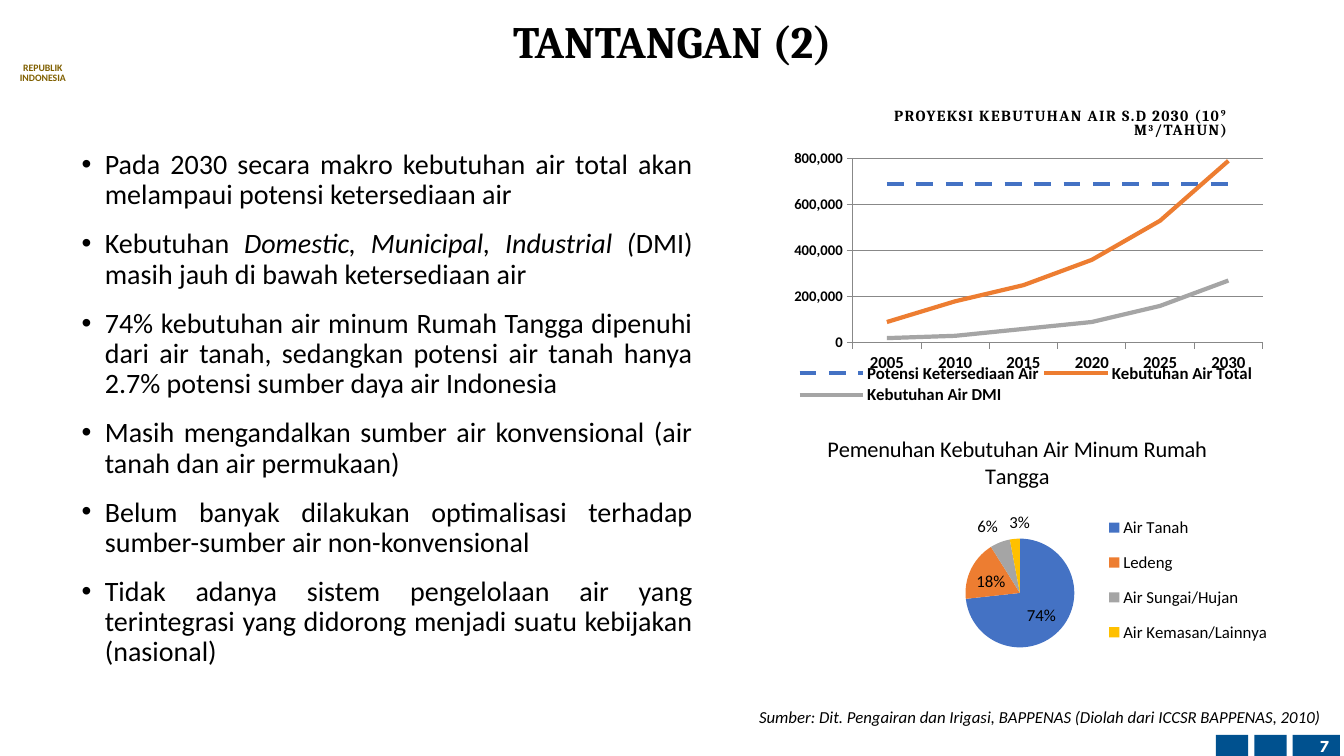
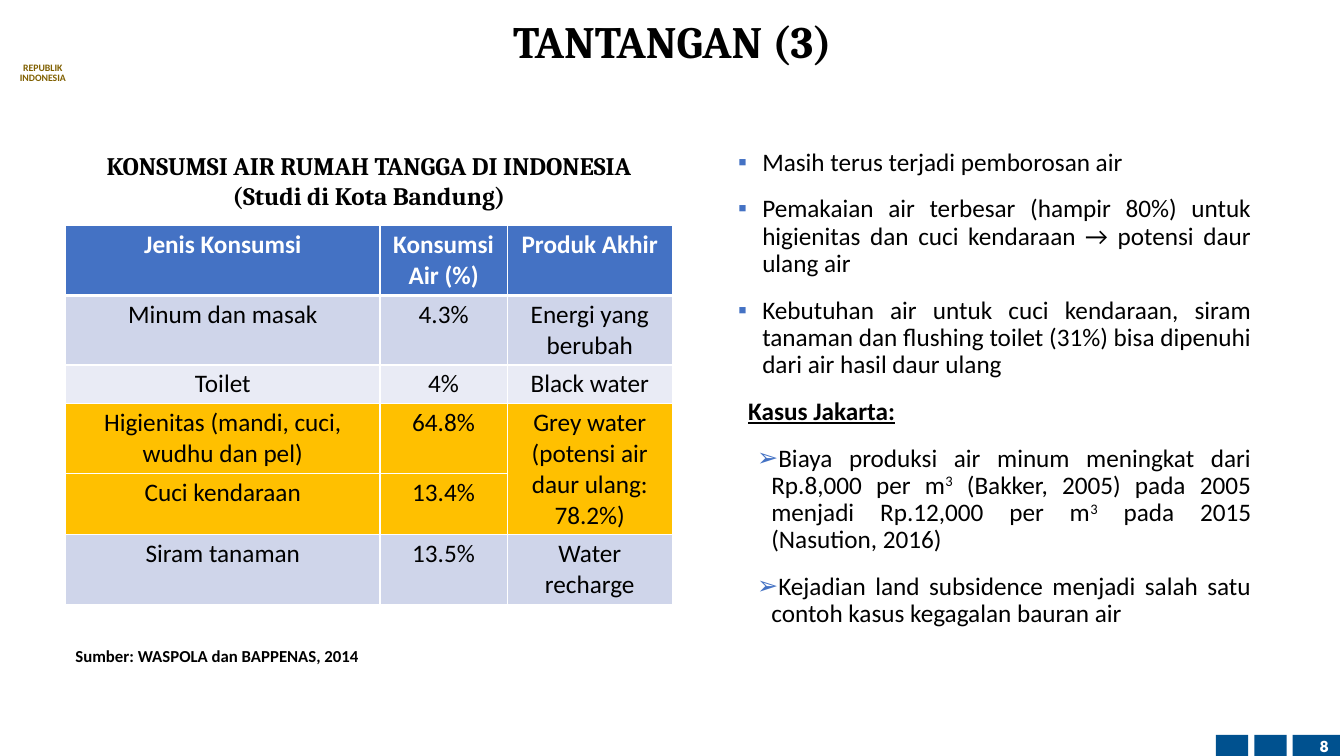
from pptx import Presentation, util as u
from pptx.chart.data import CategoryChartData
from pptx.dml.color import RGBColor
from pptx.enum import chart as c, dml, shapes, text
from pptx.oxml import parse_xml
from pptx.oxml.ns import nsdecls

Inches, Pt = u.Inches, u.Pt
LEFT, CENTER, RIGHT, JUSTIFY = (text.PP_ALIGN.LEFT, text.PP_ALIGN.CENTER,
                                text.PP_ALIGN.RIGHT, text.PP_ALIGN.JUSTIFY)
MIDDLE, TOP = text.MSO_ANCHOR.MIDDLE, text.MSO_ANCHOR.TOP
INSIDE, OUTSIDE = c.XL_LABEL_POSITION.INSIDE_END, c.XL_LABEL_POSITION.OUTSIDE_END

BLACK, WHITE, NAVY, BROWN = "000000", "FFFFFF", "00518F", "806000"
BLUE, ORANGE, GRAY, GOLD = "4472C4", "ED7D31", "A5A5A5", "FFC000"
BAND_DARK, BAND_LIGHT, AXIS_GRAY = "CFD5EA", "E9EBF5", "888888"
BODY_FONT, TITLE_FONT, NUMBER_FONT = "Calibri", "Cambria", "League Spartan"


def color(value):
    return RGBColor.from_string(value)


def style_font(font, size, value=BLACK, name=BODY_FONT, bold=False, italic=False):
    font.size, font.name, font.bold, font.italic = Pt(size), name, bold, italic
    font.color.rgb = color(value)


def write(paragraph, pieces, size, align=LEFT, spacing=None, **style):
    """Fill a paragraph; a piece is a string or (string, marks: b, i, u, ^ for superscript)."""
    paragraph.alignment = align
    if spacing:
        paragraph.line_spacing = spacing
    for piece in [pieces] if isinstance(pieces, str) else pieces:
        words, marks = (piece, "") if isinstance(piece, str) else piece
        run = paragraph.add_run()
        run.text = words
        style_font(run.font, size, **style)
        for mark, attribute in (("b", "bold"), ("i", "italic"), ("u", "underline")):
            if mark in marks:
                setattr(run.font, attribute, True)
        if "^" in marks:
            run._r.get_or_add_rPr().set("baseline", "30000")


def set_bullet(paragraph, left, hanging, character, value):
    properties = paragraph._p.get_or_add_pPr()
    properties.set("marL", str(Inches(left)))
    properties.set("indent", str(Inches(-hanging)))
    if not character:
        properties.append(parse_xml(f"<a:buNone {nsdecls('a')}/>"))
        return
    properties.append(parse_xml(
        f'<a:buClr {nsdecls("a")}><a:srgbClr val="{value}"/></a:buClr>'))
    properties.append(parse_xml(f'<a:buChar {nsdecls("a")} char="{character}"/>'))


def set_border(cell, side, width):
    cell._tc.get_or_add_tcPr().append(parse_xml(
        f'<a:ln{side} {nsdecls("a")} w="{Pt(width)}"><a:solidFill>'
        f'<a:srgbClr val="{WHITE}"/></a:solidFill></a:ln{side}>'))


def place_chart_parts(chart, plot, legend):
    """Set the plot area and legend boxes as fractions of the chart."""
    def layout(box, target=""):
        x, y, width, height = box
        return parse_xml(
            f'<c:layout {nsdecls("c")}><c:manualLayout>{target}'
            f'<c:xMode val="edge"/><c:yMode val="edge"/><c:x val="{x}"/><c:y val="{y}"/>'
            f'<c:w val="{width}"/><c:h val="{height}"/></c:manualLayout></c:layout>')

    for old in chart.element.xpath("c:chart/c:plotArea/c:layout | c:chart/c:legend/c:layout"):
        old.getparent().remove(old)
    inner = '<c:layoutTarget val="inner"/>'
    chart.element.xpath("c:chart/c:plotArea")[0].insert(0, layout(plot, inner))
    chart.element.xpath("c:chart/c:legend/c:legendPos")[0].addnext(layout(legend))


def shift_last_label(chart, x, y):
    """Move the last point's label by fractions of the chart, without a leader line."""
    chart.element.xpath(".//c:dLbl/c:idx")[-1].addnext(parse_xml(
        f'<c:layout {nsdecls("c")}><c:manualLayout><c:x val="{x}"/><c:y val="{y}"/>'
        f'</c:manualLayout></c:layout>'))
    for leader in chart.element.xpath(".//c:showLeaderLines"):
        leader.set("val", "0")


class Deck:
    """The shared style and the slide being built."""

    def __init__(self):
        self.presentation = Presentation()
        self.presentation.slide_width = Inches(13.33)
        self.presentation.slide_height = Inches(7.5)
        self.slide = None

    def new_slide(self, title, number):
        self.slide = self.presentation.slides.add_slide(self.presentation.slide_layouts[1])
        for left, width in ((12.06, 0.32), (12.44, 0.32), (12.82, 0.47)):
            self.rectangle(left, 7.29, width, 0.22, NAVY)
        self.textbox((0.05, 0.58, 0.75, 0.3), "REPUBLIK INDONESIA", 7, CENTER,
                     spacing=Pt(7), value=BROWN, bold=True)
        self.textbox((12.75, 7.29, 0.53, 0.22), number, 12, RIGHT, anchor=MIDDLE,
                     value=WHITE, name=NUMBER_FONT, bold=True)
        frame = self.frame(self.slide.shapes.title, (1.1, 0.03, 11.14, 0.81), MIDDLE)
        write(frame.paragraphs[0], title, 32, CENTER, 0.9, name=TITLE_FONT, bold=True)

    def frame(self, shape, box, anchor=TOP, inset=(0.1, 0.05)):
        shape.left, shape.top, shape.width, shape.height = map(Inches, box)
        frame = shape.text_frame
        frame.word_wrap, frame.auto_size = True, text.MSO_AUTO_SIZE.NONE
        frame.vertical_anchor = anchor
        frame.margin_left = frame.margin_right = Inches(inset[0])
        frame.margin_top = frame.margin_bottom = Inches(inset[1])
        return frame

    def rectangle(self, left, top, width, height, value):
        shape = self.slide.shapes.add_shape(
            shapes.MSO_SHAPE.RECTANGLE, *map(Inches, (left, top, width, height)))
        shape.shadow.inherit = False
        shape.fill.solid()
        shape.fill.fore_color.rgb = color(value)
        shape.line.fill.background()

    def textbox(self, box, pieces, size, align=LEFT, anchor=TOP, inset=(0.1, 0.05), **style):
        shape = self.slide.shapes.add_textbox(*map(Inches, box))
        paragraph = self.frame(shape, box, anchor, inset).paragraphs[0]
        write(paragraph, pieces, size, align, **style)
        return paragraph

    def bullet_list(self, box, items, size, before, after=0, value=BLACK, inset=(0.1, 0.05)):
        """Fill the body placeholder; an item is (bullet style, pieces)."""
        frame = self.frame(self.slide.placeholders[1], box, inset=inset)
        for index, (bullet, pieces) in enumerate(items):
            paragraph = frame.add_paragraph() if index else frame.paragraphs[0]
            set_bullet(paragraph, *bullet, value)
            paragraph.space_before = Pt(before if index else 0)
            paragraph.space_after = Pt(after)
            write(paragraph, pieces, size, JUSTIFY, 0.9)

    def chart(self, kind, box, categories, series, number_format, bold=False):
        data = CategoryChartData(number_format=number_format)
        data.categories = categories
        for name, values in series:
            data.add_series(name, values)
        chart = self.slide.shapes.add_chart(kind, *map(Inches, box), data).chart
        style_font(chart.font, 12, bold=bold)
        chart.has_title = False
        chart.has_legend = True
        chart.legend.include_in_layout = False
        style_font(chart.legend.font, 12, bold=bold)
        return chart

    def line_chart(self, box, categories, series, colors):
        chart = self.chart(c.XL_CHART_TYPE.LINE, box, categories, series, "#,##0", bold=True)
        chart.legend.position = c.XL_LEGEND_POSITION.BOTTOM
        place_chart_parts(chart, (0.14, 0.05, 0.84, 0.69), (0.02, 0.81, 0.95, 0.17))
        chart.plots[0].vary_by_categories = False
        for line, value in zip(chart.plots[0].series, colors):
            line.smooth = False
            line.marker.style = c.XL_MARKER_STYLE.NONE
            line.format.line.width = Pt(3)
            line.format.line.color.rgb = color(value)
        chart.plots[0].series[0].format.line.dash_style = dml.MSO_LINE.DASH
        values = chart.value_axis
        values.minimum_scale, values.maximum_scale, values.major_unit = 0, 800000, 200000
        values.major_gridlines.format.line.color.rgb = color(AXIS_GRAY)
        for axis, size in ((values, 10.5), (chart.category_axis, 12)):
            axis.major_tick_mark = c.XL_TICK_MARK.OUTSIDE
            axis.format.line.color.rgb = color(AXIS_GRAY)
            style_font(axis.tick_labels.font, size, bold=True)

    def pie_chart(self, box, title, shares, colors):
        chart = self.chart(c.XL_CHART_TYPE.PIE, box, list(shares),
                           [("Series 1", list(shares.values()))], "0%")
        chart.has_title = True
        write(chart.chart_title.text_frame.paragraphs[0], title, 16, CENTER)
        chart.legend.position = c.XL_LEGEND_POSITION.RIGHT
        place_chart_parts(chart, (0.4, 0.41, 0.21, 0.38), (0.67, 0.29, 0.32, 0.53))
        plot = chart.plots[0]
        plot.vary_by_categories = True
        plot.has_data_labels = True
        plot.data_labels.show_value = True
        plot.data_labels.number_format = "0%"
        plot.data_labels.number_format_is_linked = False
        for index, (share, value) in enumerate(zip(shares.values(), colors)):
            point = plot.series[0].points[index]
            point.format.fill.solid()
            point.format.fill.fore_color.rgb = color(value)
            style_font(point.data_label.font, 12)
            point.data_label.position = INSIDE if share > 0.1 else OUTSIDE
        shift_last_label(chart, 0.03, 0)

    def table(self, box, widths, heights, rows, fills, merge):
        """Draw a table with a header row; merge is a pair of (row, column)."""
        table = self.slide.shapes.add_table(
            len(rows), len(widths), *map(Inches, box)).table
        for column, width in zip(table.columns, widths):
            column.width = Inches(width)
        for row, height in zip(table.rows, heights):
            row.height = Inches(height)
        for row_index, (row, fill) in enumerate(zip(rows, fills)):
            header = row_index == 0
            for column_index, words in enumerate(row):
                cell = table.cell(row_index, column_index)
                cell.margin_left = cell.margin_right = Inches(0.07)
                cell.margin_top = cell.margin_bottom = Inches(0.04)
                for side in "LRTB":
                    thick = (header and side == "B") or (row_index == 1 and side == "T")
                    set_border(cell, side, 3 if thick else 1)
                cell.fill.solid()
                cell.fill.fore_color.rgb = color(fill)
                if words:
                    write(cell.text_frame.paragraphs[0], words, 18, CENTER,
                          value=WHITE if header else BLACK, bold=header)
        first, last = merge
        table.cell(*first).merge(table.cell(*last))


def build_projection_slide(deck):
    deck.new_slide("TANTANGAN (2)", "7")
    dot = (0.23, 0.23, "•")
    points = [
        "Pada 2030 secara makro kebutuhan air total akan melampaui potensi ketersediaan air",
        ["Kebutuhan ", ("Domestic, Municipal, Industrial (", "i"),
         "DMI) masih jauh di bawah ketersediaan air"],
        "74% kebutuhan air minum Rumah Tangga dipenuhi dari air tanah, sedangkan potensi "
        "air tanah hanya 2.7% potensi sumber daya air Indonesia",
        "Masih mengandalkan sumber air konvensional (air tanah dan air permukaan)",
        "Belum banyak dilakukan optimalisasi terhadap sumber-sumber air non-konvensional",
        "Tidak adanya sistem pengelolaan air yang terintegrasi yang didorong menjadi "
        "suatu kebijakan (nasional)",
    ]
    deck.bullet_list((0.71, 1.44, 6.26, 4.77), [(dot, point) for point in points], 20, 13.5)
    deck.pie_chart((7.52, 4.15, 5.14, 2.89), "Pemenuhan Kebutuhan Air Minum Rumah Tangga",
                   {"Air Tanah": 0.74, "Ledeng": 0.18, "Air Sungai/Hujan": 0.06,
                    "Air Kemasan/Lainnya": 0.03}, (BLUE, ORANGE, GRAY, GOLD))
    heading = deck.textbox(
        (7.92, 1.07, 4.32, 0.32),
        ["PROYEKSI KEBUTUHAN AIR S.D 2030 (10", ("9", "^"), " M", ("3", "^"), "/TAHUN)"],
        11, RIGHT, MIDDLE, (0.07, 0.04), spacing=0.8, name=TITLE_FONT, bold=True)
    for run in heading.runs:
        run._r.get_or_add_rPr().set("spc", "100")
    deck.line_chart(
        (7.78, 1.44, 4.84, 2.65), [str(year) for year in range(2005, 2031, 5)],
        [("Potensi Ketersediaan Air", [690000] * 6),
         ("Kebutuhan Air Total", [90000, 180000, 250000, 360000, 530000, 790000]),
         ("Kebutuhan Air DMI", [20000, 30000, 60000, 90000, 160000, 270000])],
        (BLUE, ORANGE, GRAY))
    deck.textbox((7.3, 6.96, 6.03, 0.3),
                 "Sumber: Dit. Pengairan dan Irigasi, BAPPENAS (Diolah dari ICCSR BAPPENAS, 2010)",
                 12, CENTER, italic=True)


def build_consumption_slide(deck):
    deck.new_slide("TANTANGAN (3)", "8")
    rows = [
        ("Jenis Konsumsi", "Konsumsi Air (%)", "Produk Akhir"),
        ("Minum dan masak", "4.3%", "Energi yang berubah"),
        ("Toilet", "4%", "Black water"),
        ("Higienitas (mandi, cuci, wudhu dan pel)", "64.8%",
         "Grey water (potensi air daur ulang: 78.2%)"),
        ("Cuci kendaraan", "13.4%", ""),
        ("Siram tanaman", "13.5%", "Water recharge"),
    ]
    deck.table((0.65, 2.24, 6.02, 3.73), (3.12, 1.26, 1.64),
               (0.69, 0.69, 0.38, 0.69, 0.61, 0.69), rows,
               (BLUE, BAND_DARK, BAND_LIGHT, GOLD, GOLD, BAND_DARK), ((3, 2), (4, 2)))
    deck.textbox((0.65, 1.44, 6.02, 0.71),
                 "KONSUMSI AIR RUMAH TANGGA DI INDONESIA (Studi di Kota Bandung)",
                 18, CENTER, name=TITLE_FONT, bold=True)
    deck.textbox((0.65, 6.36, 3.44, 0.3), "Sumber: WASPOLA dan BAPPENAS, 2014", 12, bold=True)
    square, plain, arrow = (0.24, 0.24, "▪"), (0.1, 0, ""), (0.33, 0.14, "➢")
    deck.bullet_list((7.28, 1.44, 5.17, 4.01), [
        (square, "Masih terus terjadi pemborosan air"),
        (square, "Pemakaian air terbesar (hampir 80%) untuk higienitas dan cuci kendaraan "
                 "→ potensi daur ulang air"),
        (square, "Kebutuhan air untuk cuci kendaraan, siram tanaman dan flushing toilet (31%) "
                 "bisa dipenuhi dari air hasil daur ulang"),
        (plain, [("Kasus Jakarta:", "bu")]),
        (arrow, ["Biaya produksi air minum meningkat dari Rp.8,000 per m", ("3", "^"),
                 " (Bakker, 2005) pada 2005 menjadi Rp.12,000 per m", ("3", "^"),
                 " pada 2015 (Nasution, 2016)"]),
        (arrow, "Kejadian land subsidence menjadi salah satu contoh kasus kegagalan bauran air"),
    ], 18, 12, 2, BLUE, (0.04, 0.04))


water_deck = Deck()
build_projection_slide(water_deck)
build_consumption_slide(water_deck)
water_deck.presentation.save("out.pptx")
